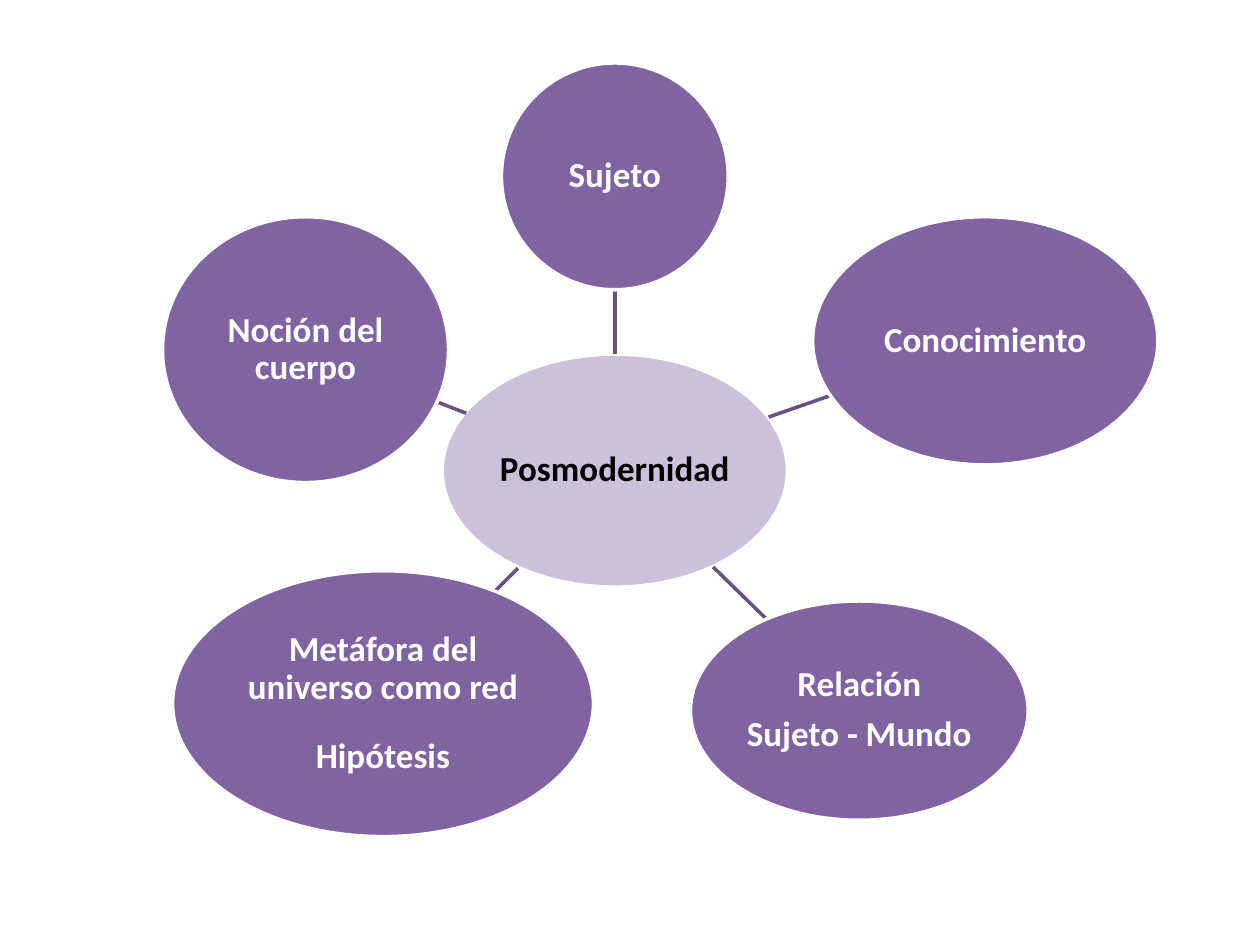
from dataclasses import dataclass

from lxml.etree import SubElement
from pptx import Presentation
from pptx.dml.color import RGBColor
from pptx.enum.shapes import MSO_CONNECTOR, MSO_SHAPE
from pptx.enum.text import MSO_ANCHOR, PP_ALIGN
from pptx.oxml.ns import qn
from pptx.util import Emu, Pt

EMU_PER_PX = 9144
INSET = 1
LIGHT = RGBColor(0xCC, 0xC1, 0xDA)
PURPLE = RGBColor(0x80, 0x64, 0xA2)
DARK = RGBColor(0x67, 0x50, 0x82)
WHITE = RGBColor(0xFF, 0xFF, 0xFF)
BLACK = RGBColor(0x00, 0x00, 0x00)


@dataclass(frozen=True)
class Node:
    lines: tuple[str, ...]
    box: tuple[int, int, int, int]
    fill: RGBColor = PURPLE
    color: RGBColor = WHITE
    gap: int = 7


@dataclass(frozen=True)
class Branch:
    link: tuple[int, int, int, int]
    node: Node


CENTER = Node(("Posmodernidad",), (351, 281, 274, 185), LIGHT, BLACK)
BRANCHES = (
    Branch((488, 281, 488, 230), Node(("Sujeto",), (398, 50, 180, 180))),
    Branch((610, 331, 659, 314), Node(("Conocimiento",), (645, 172, 274, 197))),
    Branch((566, 450, 608, 491),
           Node(("Relación", "Sujeto - Mundo"), (548, 477, 268, 174))),
    Branch((411, 451, 393, 469),
           Node(("Metáfora del universo como red", "Hipótesis"),
                (137, 453, 334, 211), gap=18)),
    Branch((370, 328, 347, 319), Node(("Noción del cuerpo",), (129, 172, 227, 211))),
)


def px(n: int) -> Emu:
    return Emu(n * EMU_PER_PX)


def draw_node(s, node: Node) -> None:
    sp = s.shapes.add_shape(MSO_SHAPE.OVAL, *map(px, node.box))
    sp.shadow.inherit = False
    sp.fill.solid()
    sp.fill.fore_color.rgb = node.fill
    sp.line.color.rgb = WHITE
    sp.line.width = Pt(2)
    tf = sp.text_frame
    tf.word_wrap = True
    tf.vertical_anchor = MSO_ANCHOR.MIDDLE
    tf.margin_left = tf.margin_right = tf.margin_top = tf.margin_bottom = px(INSET)
    for i, line in enumerate(node.lines):
        p = tf.add_paragraph() if i else tf.paragraphs[0]
        p.text = line
        p.alignment = PP_ALIGN.CENTER
        p.line_spacing = 0.9
        p.space_after = Pt(7 if line == node.lines[-1] else node.gap)
        p.font.name = "Calibri"
        p.font.size = Pt(20)
        p.font.bold = True
        p.font.color.rgb = node.color


def draw_link(s, link: tuple[int, int, int, int]) -> None:
    cxn = s.shapes.add_connector(MSO_CONNECTOR.STRAIGHT, *map(px, link))
    cxn.line.color.rgb = DARK
    cxn.line.width = Pt(2)
    SubElement(cxn._element.spPr, qn("a:effectLst"))


def main() -> None:
    prs = Presentation()
    prs.slide_width, prs.slide_height = px(1000), px(750)
    s = prs.slides.add_slide(prs.slide_layouts[6])
    draw_node(s, CENTER)
    for branch in BRANCHES:
        draw_link(s, branch.link)
        draw_node(s, branch.node)
    prs.save("out.pptx")


if __name__ == "__main__":
    main()
